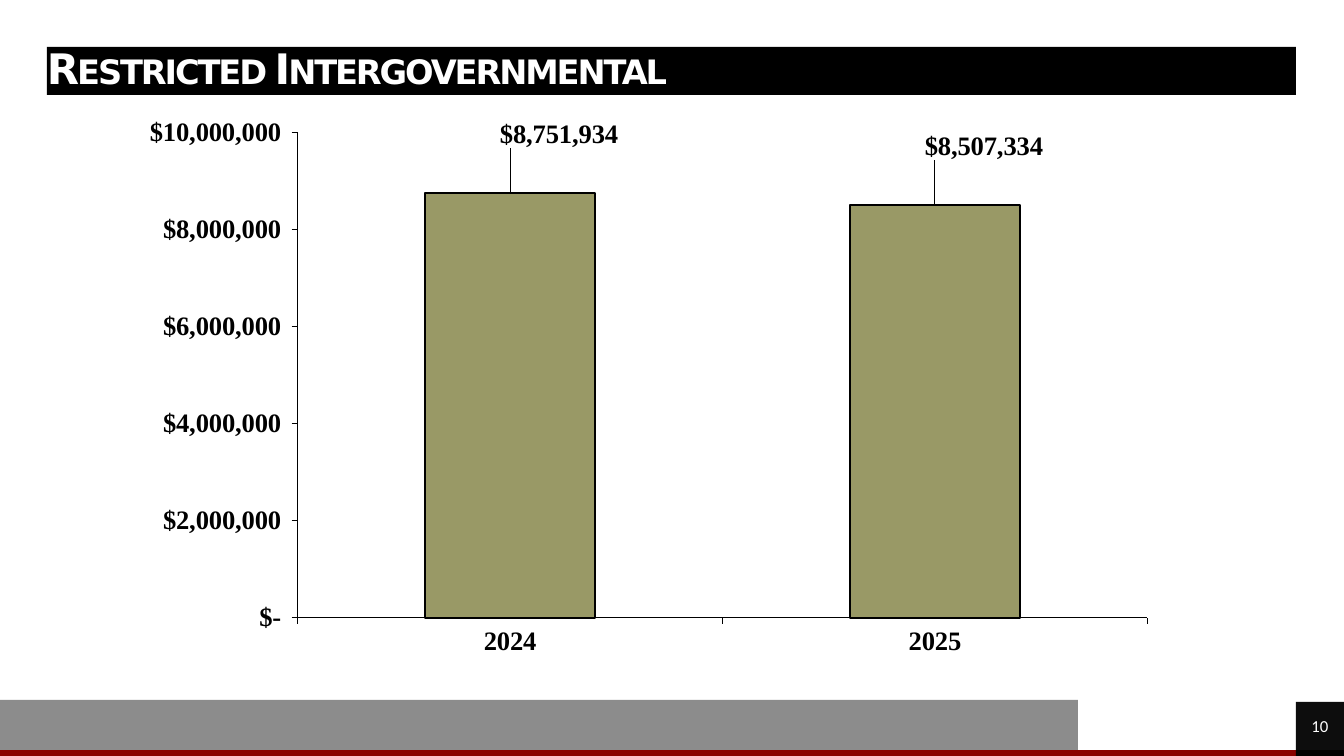
from lxml import etree
from pptx import Presentation
from pptx import util as u
from pptx.chart import data as chart_data
from pptx.dml import color
from pptx.enum import chart as chart_enum, shapes, text
from pptx.oxml import ns

PX = 914400 / 100.8
WIDTH, HEIGHT = 1344, 756
STRIP = 6
TAB = 48
FOOTER_WIDTH = 1078
DOLLARS = '"$"#,##0'
AXIS_DOLLARS = '"$"#,##0_);"$"#,##0_);"$-"_)'


def px(length):
    return u.Emu(round(length * PX))


def rgb(value):
    return color.RGBColor.from_string(value)


def add_block(slide, box, fill):
    shape = slide.shapes.add_shape(shapes.MSO_SHAPE.RECTANGLE, *map(px, box))
    shape.shadow.inherit = False
    shape.fill.solid()
    shape.fill.fore_color.rgb = rgb(fill)
    shape.line.fill.background()
    return shape


def style_font(font, size, name, fill="000000", bold=True):
    font.size = u.Pt(size)
    font.name = name
    font.bold = bold
    font.color.rgb = rgb(fill)


def write(shape, words, size, font, align, bold=False, line_spacing=None, **run_format):
    frame = shape.text_frame
    frame.word_wrap = True
    frame.margin_left = frame.margin_right = frame.margin_top = frame.margin_bottom = 0
    frame.vertical_anchor = text.MSO_ANCHOR.MIDDLE
    paragraph = frame.paragraphs[0]
    paragraph.alignment = align
    paragraph.line_spacing = line_spacing
    run = paragraph.add_run()
    run.text = words
    style_font(run.font, size, font, "FFFFFF", bold)
    for key, value in run_format.items():
        run._r.get_or_add_rPr().set(key, value)


def add_title(slide, box):
    write(add_block(slide, box, "000000"), "Restricted Intergovernmental", 30,
          "DejaVu Sans", text.PP_ALIGN.LEFT, bold=True, line_spacing=0.9,
          cap="small", spc="-150")


def add_footer(slide, box):
    left, top, width, height = box
    strip_top = top + height - STRIP
    tab_left = left + width - TAB
    add_block(slide, (left, top, FOOTER_WIDTH, height - STRIP), "8C8C8C")
    add_block(slide, (left, strip_top, FOOTER_WIDTH, STRIP), "8A0000")
    add_block(slide, (left + FOOTER_WIDTH, strip_top, width - FOOTER_WIDTH - TAB, STRIP), "8A0000")
    add_block(slide, (tab_left, strip_top, TAB, STRIP), "000000")
    number = add_block(slide, (tab_left, strip_top - TAB, TAB, TAB), "0D0D0D")
    write(number, "10", 12, "Calibri", text.PP_ALIGN.CENTER)


def make_layout(inner=False, **fractions):
    layout = etree.Element(ns.qn("c:layout"))
    manual = etree.SubElement(layout, ns.qn("c:manualLayout"))
    settings = {"layoutTarget": "inner", "xMode": "edge", "yMode": "edge"} if inner else {}
    for tag, value in {**settings, **fractions}.items():
        etree.SubElement(manual, ns.qn("c:" + tag)).set("val", str(value))
    return layout


def place_plot(chart):
    plot_area = chart._chartSpace.chart.plotArea
    for layout in plot_area.findall(ns.qn("c:layout")):
        plot_area.remove(layout)
    plot_area.insert(0, make_layout(inner=True, x=0.164, y=0.034, w=0.798, h=0.847))


def style_axis(axis):
    axis.has_major_gridlines = False
    axis.major_tick_mark = chart_enum.XL_TICK_MARK.OUTSIDE
    axis.minor_tick_mark = chart_enum.XL_TICK_MARK.NONE
    axis.tick_label_position = chart_enum.XL_TICK_LABEL_POSITION.LOW
    axis.format.line.color.rgb = rgb("000000")
    axis.format.line.width = u.Pt(0.3)
    style_font(axis.tick_labels.font, 19, "Times New Roman")


def label_bars(series, count):
    labels = series.data_labels
    labels.show_value = True
    labels.number_format = DOLLARS
    labels.number_format_is_linked = False
    style_font(labels.font, 19, "Times New Roman")
    for index in range(count):
        label = series.points[index].data_label
        style_font(label.font, 19, "Times New Roman")
        label.position = chart_enum.XL_LABEL_POSITION.OUTSIDE_END
        element = labels._element.findall(ns.qn("c:dLbl"))[index]
        element.insert(1, make_layout(x=0.046, y=-0.07))


def add_revenue_chart(slide, box):
    data = chart_data.CategoryChartData(number_format=DOLLARS)
    data.categories = ["2024", "2025"]
    data.add_series("Series 1", (8751934, 8507334))
    kind = chart_enum.XL_CHART_TYPE.COLUMN_CLUSTERED
    chart = slide.shapes.add_chart(kind, *map(px, box), data).chart
    chart.has_legend = False
    chart.has_title = False
    style_font(chart.font, 21.7, "Times New Roman")
    place_plot(chart)

    value_axis = chart.value_axis
    for axis in (chart.category_axis, value_axis):
        style_axis(axis)
    value_axis.minimum_scale = 0
    value_axis.maximum_scale = 10000000
    value_axis.major_unit = 2000000
    value_axis.tick_labels.number_format = AXIS_DOLLARS
    value_axis.tick_labels.number_format_is_linked = False

    plot = chart.plots[0]
    plot.vary_by_categories = False
    plot.gap_width = 150
    series = plot.series[0]
    series.format.fill.solid()
    series.format.fill.fore_color.rgb = rgb("999966")
    series.format.line.color.rgb = rgb("000000")
    series.format.line.width = u.Pt(1.21)
    label_bars(series, 2)


def main():
    presentation = Presentation()
    presentation.slide_width = px(WIDTH)
    presentation.slide_height = px(HEIGHT)
    slide = presentation.slides.add_slide(presentation.slide_layouts[6])
    add_footer(slide, (0, 700, WIDTH, 56))
    add_title(slide, (47, 47, 1249, 48))
    add_revenue_chart(slide, (123, 113, 1065, 573))
    presentation.save("out.pptx")


if __name__ == "__main__":
    main()
